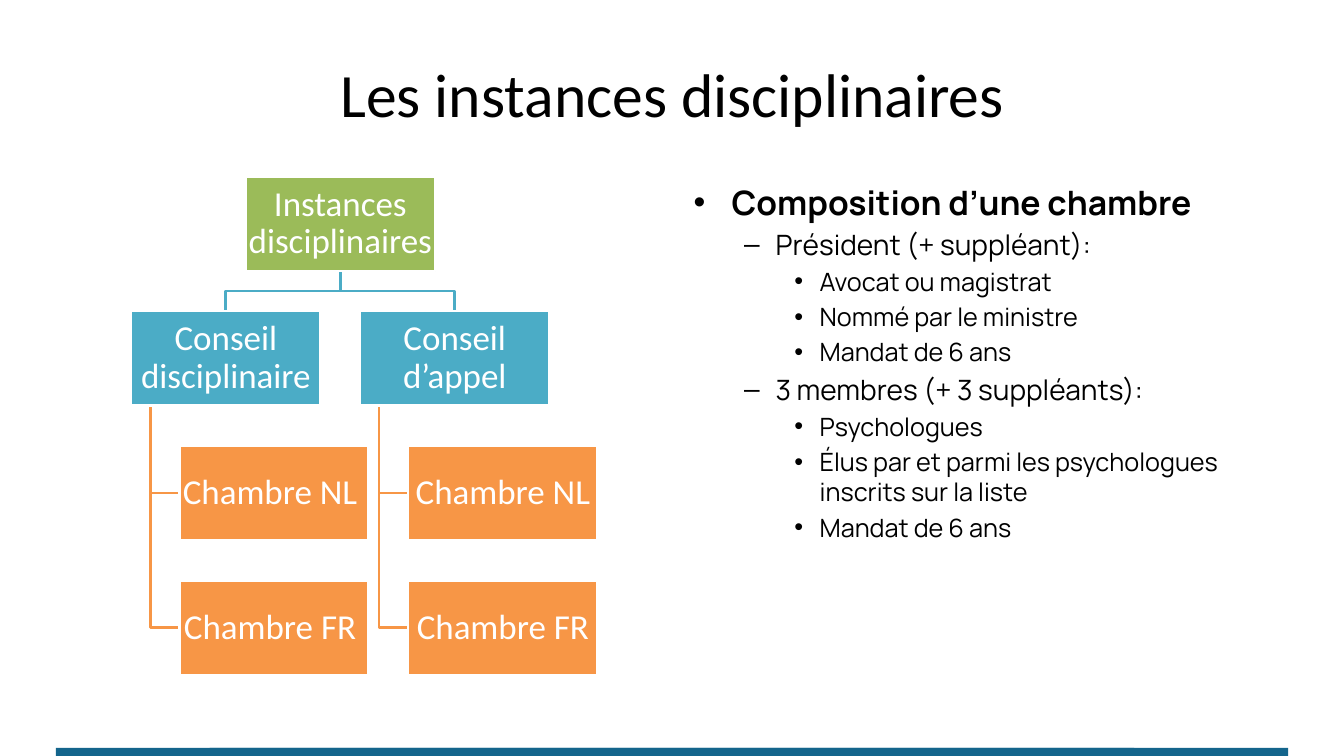
"""Build the slide on the disciplinary bodies and the make-up of a chamber."""
from dataclasses import dataclass
from typing import Any, Optional

from pptx import Presentation
from pptx.dml.color import RGBColor
from pptx.enum.shapes import MSO_SHAPE as Preset
from pptx.enum.text import MSO_ANCHOR as Anchor, MSO_AUTO_SIZE as AutoSize, PP_ALIGN as Align
from pptx.util import Inches, Pt

SLIDE_WIDTH, SLIDE_HEIGHT = 13.33, 7.5
CHART_LEFT, CHART_TOP = 1.3, 1.75
COLUMN, ROW = 2.27, 1.336
BOX_WIDTH, BOX_HEIGHT = 1.88, 0.94
SPINE_INSET, CHAMBER_SHIFT = 0.19, 0.21
GREEN, TEAL, ORANGE, BLUE = "9BBB59", "4BACC6", "F79646", "14658C"
WHITE, BLACK = "FFFFFF", "000000"
LEVEL_SIZES = (24, 20, 18)


@dataclass(frozen=True)
class Body:
    """A box of the organisation chart, placed by grid column and row."""

    label: str
    column: float
    row: int
    color: str
    parent: Optional["Body"] = None

    @property
    def left(self) -> float:
        """Left edge in inches."""
        return CHART_LEFT + self.column * COLUMN

    @property
    def top(self) -> float:
        """Top edge in inches."""
        return CHART_TOP + self.row * ROW


@dataclass(frozen=True)
class Point:
    """A line of the list with its level."""

    text: str
    level: int


ROOT = Body("Instances disciplinaires", 0.5, 0, GREEN)
COUNCILS = [
    Body(label, column, 1, TEAL, ROOT)
    for column, label in enumerate(("Conseil disciplinaire", "Conseil d’appel"))
]
CHAMBERS = [
    Body(label, council.column + CHAMBER_SHIFT, row, ORANGE, council)
    for council, labels in zip(
        COUNCILS, (("Chambre NL ", "Chambre FR "), ("Chambre NL", "Chambre FR"))
    )
    for row, label in enumerate(labels, start=2)
]
COMPOSITION = [
    Point("Composition d’une chambre", 0),
    Point("Président (+ suppléant):", 1),
    Point("Avocat ou magistrat", 2),
    Point("Nommé par le ministre", 2),
    Point("Mandat de 6 ans", 2),
    Point("3 membres (+ 3 suppléants):", 1),
    Point("Psychologues", 2),
    Point("Élus par et parmi les psychologues inscrits sur la liste", 2),
    Point("Mandat de 6 ans", 2),
]


def rgb(color: str) -> RGBColor:
    """Turn a hex string into a colour."""
    return RGBColor.from_string(color)


def apply(target: Any, **values: Any) -> None:
    """Set each given attribute on the target."""
    for name, value in values.items():
        setattr(target, name, value)


def style_font(font: Any, name: str, size: float, color: str, bold: bool = False) -> None:
    """Give a font its face, size, colour and weight."""
    apply(font, name=name, size=Pt(size), bold=bold)
    font.color.rgb = rgb(color)


def place(shape: Any, left: float, top: float, width: float, height: float) -> None:
    """Move and size a shape, in inches."""
    apply(shape, left=Inches(left), top=Inches(top), width=Inches(width), height=Inches(height))


def add_block(slide: Any, left: float, top: float, width: float, height: float, color: str) -> Any:
    """Add a filled rectangle without outline or shadow."""
    block = slide.shapes.add_shape(
        Preset.RECTANGLE, Inches(left), Inches(top), Inches(width), Inches(height)
    )
    block.shadow.inherit = False
    block.fill.solid()
    block.fill.fore_color.rgb = rgb(color)
    block.line.fill.background()
    return block


def add_link(slide: Any, child: Body, parent: Body) -> None:
    """Draw the bent line from a parent to its child."""
    bottom = parent.top + BOX_HEIGHT
    if child.color == TEAL:
        start, end = parent.left + BOX_WIDTH / 2, child.left + BOX_WIDTH / 2
        middle = (bottom + child.top) / 2
        route = [(start, bottom), (start, middle), (end, middle), (end, child.top)]
    else:
        spine, middle = parent.left + SPINE_INSET, child.top + BOX_HEIGHT / 2
        route = [(spine, bottom), (spine, middle), (child.left, middle)]
    corners = [(Inches(x), Inches(y)) for x, y in route]
    builder = slide.shapes.build_freeform(*corners[0])
    builder.add_line_segments(corners[1:], close=False)
    link = builder.convert_to_shape()
    link.shadow.inherit = False
    link.fill.background()
    link.line.color.rgb = rgb(child.color)
    link.line.width = Pt(2)


def add_body(slide: Any, body: Body) -> None:
    """Draw a labelled box of the chart."""
    box = add_block(slide, body.left, body.top, BOX_WIDTH, BOX_HEIGHT, body.color)
    box.line.color.rgb = rgb(WHITE)
    box.line.width = Pt(2)
    margins = {f"margin_{side}": Inches(0.02) for side in ("left", "right", "top", "bottom")}
    apply(box.text_frame, word_wrap=True, vertical_anchor=Anchor.MIDDLE, **margins)
    paragraph = box.text_frame.paragraphs[0]
    apply(paragraph, text=body.label, alignment=Align.CENTER, line_spacing=0.9)
    style_font(paragraph.runs[0].font, "Calibri", 25, WHITE)


def fill_title(title: Any) -> None:
    """Place and write the title."""
    place(title, 0.67, 0.3, 12, 1.25)
    apply(title.text_frame, text="Les instances disciplinaires", vertical_anchor=Anchor.MIDDLE)
    paragraph = title.text_frame.paragraphs[0]
    paragraph.alignment = Align.CENTER
    style_font(paragraph.runs[0].font, "Calibri", 44, BLACK)


def fill_list(placeholder: Any) -> None:
    """Place and write the list on the composition of a chamber."""
    place(placeholder, 6.78, CHART_TOP, 5.89, 4.95)
    frame = placeholder.text_frame
    apply(frame, auto_size=AutoSize.NONE, word_wrap=True)
    for index, point in enumerate(COMPOSITION):
        paragraph = frame.add_paragraph() if index else frame.paragraphs[0]
        apply(paragraph, text=point.text, level=point.level)
        if index == 0:
            paragraph.space_before = Pt(0)
        size = LEVEL_SIZES[point.level]
        style_font(paragraph.runs[0].font, "Manrope", size, BLACK, point.level == 0)


def main() -> None:
    """Build and save the slide."""
    deck = Presentation()
    apply(deck, slide_width=Inches(SLIDE_WIDTH), slide_height=Inches(SLIDE_HEIGHT))
    slide = deck.slides.add_slide(deck.slide_layouts[1])
    fill_title(slide.shapes.title)
    fill_list(slide.placeholders[1])
    for bar_width in (12.22, 9.17):
        add_block(slide, (SLIDE_WIDTH - bar_width) / 2, 7.42, bar_width, 0.08, BLUE)
    bodies = [ROOT, *COUNCILS, *CHAMBERS]
    for body in bodies:
        if body.parent:
            add_link(slide, body, body.parent)
    for body in bodies:
        add_body(slide, body)
    deck.save("out.pptx")


if __name__ == "__main__":
    main()
